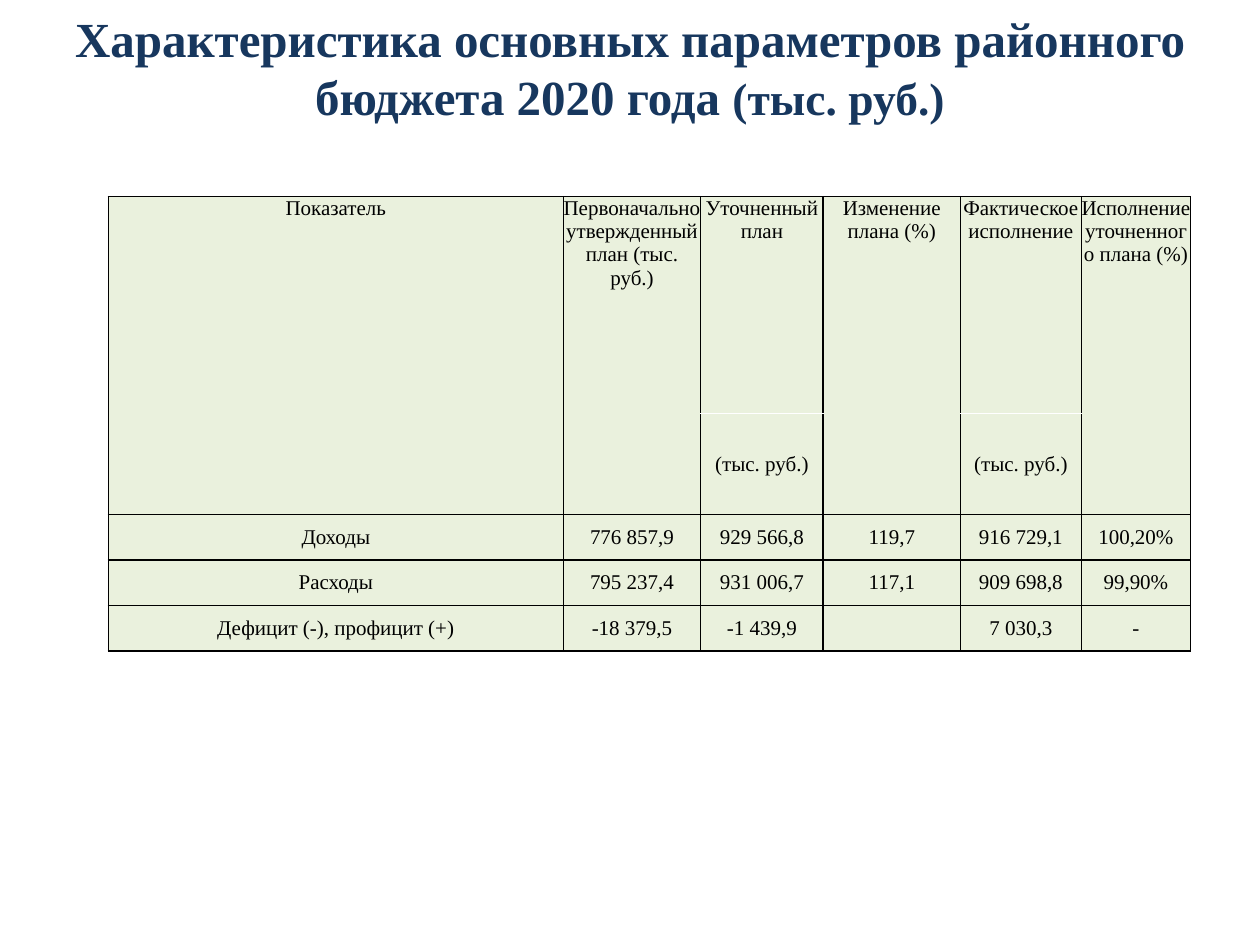
import pptx
import pptx.dml.color
import pptx.enum.text
import pptx.oxml
import pptx.oxml.ns
import pptx.util

Pt = pptx.util.Pt
ALIGN = pptx.enum.text.PP_ALIGN
ANCHOR = pptx.enum.text.MSO_ANCHOR
FONT = "Times New Roman"
COLORS = {"title": "17375E", "text": "000000", "cell": "EAF1DD", "border": "000000"}
COLUMN_WIDTHS = [260, 78.5, 70, 78.5, 69, 62.5]
ROW_HEIGHTS = [124, 51, 26, 26, 26]
SPLIT_COLUMNS = (2, 4)
ROWS = [
    ["Показатель", "Первоначально утвержденный план (тыс. руб.)", "Уточненный план",
     "Изменение плана (%)", "Фактическое исполнение", "Исполнение уточненного плана (%)"],
    ["", "", "(тыс. руб.)", "", "(тыс. руб.)", ""],
    ["Доходы", "776 857,9", "929 566,8", "119,7", "916 729,1", "100,20%"],
    ["Расходы", "795 237,4", "931 006,7", "117,1", "909 698,8", "99,90%"],
    ["Дефицит (-), профицит (+)", "-18 379,5", "-1 439,9", "", "7 030,3", "-"],
]


def set_values(target, values):
    for name, value in values.items():
        setattr(target, name, value)


def rgb(name):
    return pptx.dml.color.RGBColor.from_string(COLORS[name])


def add_span(para, text, size, color, bold=False):
    span = para.add_run()
    span.text = text
    set_values(span.font, {"name": FONT, "size": Pt(size), "bold": bold})
    span.font.color.rgb = rgb(color)


def add_title(page):
    box = page.shapes.add_textbox(Pt(0), Pt(0), Pt(720), Pt(97.2))
    set_values(box.text_frame, {
        "word_wrap": True,
        "vertical_anchor": ANCHOR.MIDDLE,
        "margin_bottom": Pt(24.3),
    })
    para = box.text_frame.paragraphs[0]
    para.alignment = ALIGN.CENTER
    add_span(para, "Характеристика основных параметров районного бюджета 2020 года ",
             28, "title", True)
    add_span(para, "(тыс. руб.)", 26, "title", True)


def add_borders(cell, sides):
    properties = cell._tc.get_or_add_tcPr()
    for position, side in enumerate(sides):
        line = pptx.oxml.parse_xml(
            f'<a:ln{side} {pptx.oxml.ns.nsdecls("a")} w="12700"><a:solidFill>'
            f'<a:srgbClr val="{COLORS["border"]}"/></a:solidFill></a:ln{side}>')
        properties.insert(position, line)


def border_sides(row, column):
    if column in SPLIT_COLUMNS and row < 2:
        return "LRT" if row == 0 else "LRB"
    return "LRTB"


def fill_cell(cell, text, anchor, sides):
    set_values(cell, {"margin_left": 0, "margin_right": 0, "margin_top": 0,
                      "margin_bottom": 0, "vertical_anchor": anchor})
    cell.fill.solid()
    cell.fill.fore_color.rgb = rgb("cell")
    add_borders(cell, sides)
    para = cell.text_frame.paragraphs[0]
    set_values(para, {"alignment": ALIGN.CENTER})
    set_values(para.font, {"name": FONT, "size": Pt(12)})
    if text:
        add_span(para, text, 12, "text")


def add_budget_table(page):
    frame = page.shapes.add_table(len(ROWS), len(COLUMN_WIDTHS), Pt(61.9), Pt(112.3),
                                  Pt(sum(COLUMN_WIDTHS)), Pt(sum(ROW_HEIGHTS)))
    table = frame.table
    set_values(table, {"first_row": False, "horz_banding": False})
    for column, width in zip(table.columns, COLUMN_WIDTHS):
        column.width = Pt(width)
    for row, height in zip(table.rows, ROW_HEIGHTS):
        row.height = Pt(height)
    for row, texts in enumerate(ROWS):
        anchor = ANCHOR.TOP if row == 0 else ANCHOR.MIDDLE
        for column, text in enumerate(texts):
            fill_cell(table.cell(row, column), text, anchor, border_sides(row, column))
    for column in range(len(COLUMN_WIDTHS)):
        if column not in SPLIT_COLUMNS:
            table.cell(0, column).merge(table.cell(1, column))


def main():
    deck = pptx.Presentation()
    set_values(deck, {"slide_width": Pt(720), "slide_height": Pt(540)})
    page = deck.slides.add_slide(deck.slide_layouts[6])
    add_title(page)
    add_budget_table(page)
    deck.save("out.pptx")


if __name__ == "__main__":
    main()
